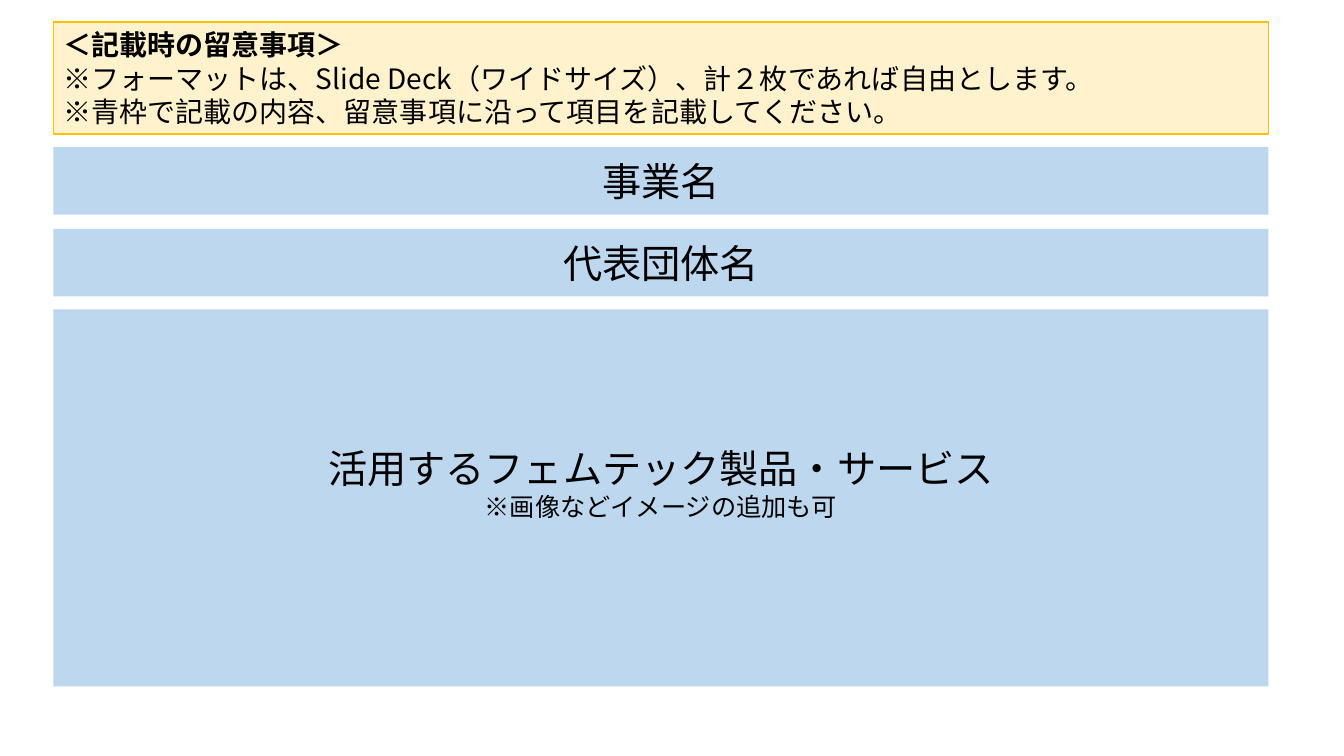
from lxml.etree import SubElement
from pptx import Presentation
from pptx.dml.color import RGBColor
from pptx.enum.shapes import MSO_SHAPE
from pptx.enum.text import MSO_ANCHOR, PP_ALIGN
from pptx.oxml.ns import qn
from pptx.util import Inches, Pt

COLORS = {"blue": "BDD7EE", "cream": "FFF2CC", "gold": "FFC000", "text": "000000"}
FONT = "Noto Sans CJK JP"
LEFT, WIDTH = 0.53, 12.05


def color(name):
    return RGBColor.from_string(COLORS[name])


def format_paragraph(paragraph, size, alignment, bold):
    paragraph.alignment = alignment
    for run in paragraph.runs:
        run.font.size = Pt(size)
        run.font.bold = bold
        run.font.name = FONT
        run.font.color.rgb = color("text")
        SubElement(run.font._element, qn("a:ea"), typeface=FONT)


def add_panel(slide, top, height, fill, lines, alignment):
    shape = slide.shapes.add_shape(
        MSO_SHAPE.RECTANGLE, Inches(LEFT), Inches(top), Inches(WIDTH), Inches(height)
    )
    shape.shadow.inherit = False
    shape.fill.solid()
    shape.fill.fore_color.rgb = color(fill)
    shape.line.fill.background()
    text_frame = shape.text_frame
    text_frame.word_wrap = True
    text_frame.vertical_anchor = MSO_ANCHOR.MIDDLE
    text_frame.text = "\n".join(text for text, size, bold in lines)
    for paragraph, (text, size, bold) in zip(text_frame.paragraphs, lines):
        format_paragraph(paragraph, size, alignment, bold)
    return shape


def add_field(slide, top, height, lines):
    return add_panel(slide, top, height, "blue", lines, PP_ALIGN.CENTER)


def add_notice(slide, top, height, lines):
    notice = add_panel(slide, top, height, "cream", lines, PP_ALIGN.LEFT)
    notice.line.color.rgb = color("gold")
    notice.line.width = Pt(1)


def main():
    presentation = Presentation()
    presentation.slide_width = Inches(13.33)
    presentation.slide_height = Inches(7.5)
    slide = presentation.slides.add_slide(presentation.slide_layouts[6])

    add_field(slide, 1.46, 0.67, [("事業名", 28, False)])
    add_field(slide, 2.27, 0.67, [("代表団体名", 28, False)])
    product_field = add_field(slide, 3.07, 3.74, [
        ("活用するフェムテック製品・サービス", 28, False),
        ("※画像などイメージの追加も可", 18, False),
    ])
    product_field.text_frame.margin_bottom = Inches(0.35)
    add_notice(slide, 0.22, 1.11, [
        ("＜記載時の留意事項＞", 20, True),
        ("※フォーマットは、Slide Deck（ワイドサイズ）、計２枚であれば自由とします。", 20, False),
        ("※青枠で記載の内容、留意事項に沿って項目を記載してください。", 20, False),
    ])
    presentation.save("out.pptx")


if __name__ == "__main__":
    main()
